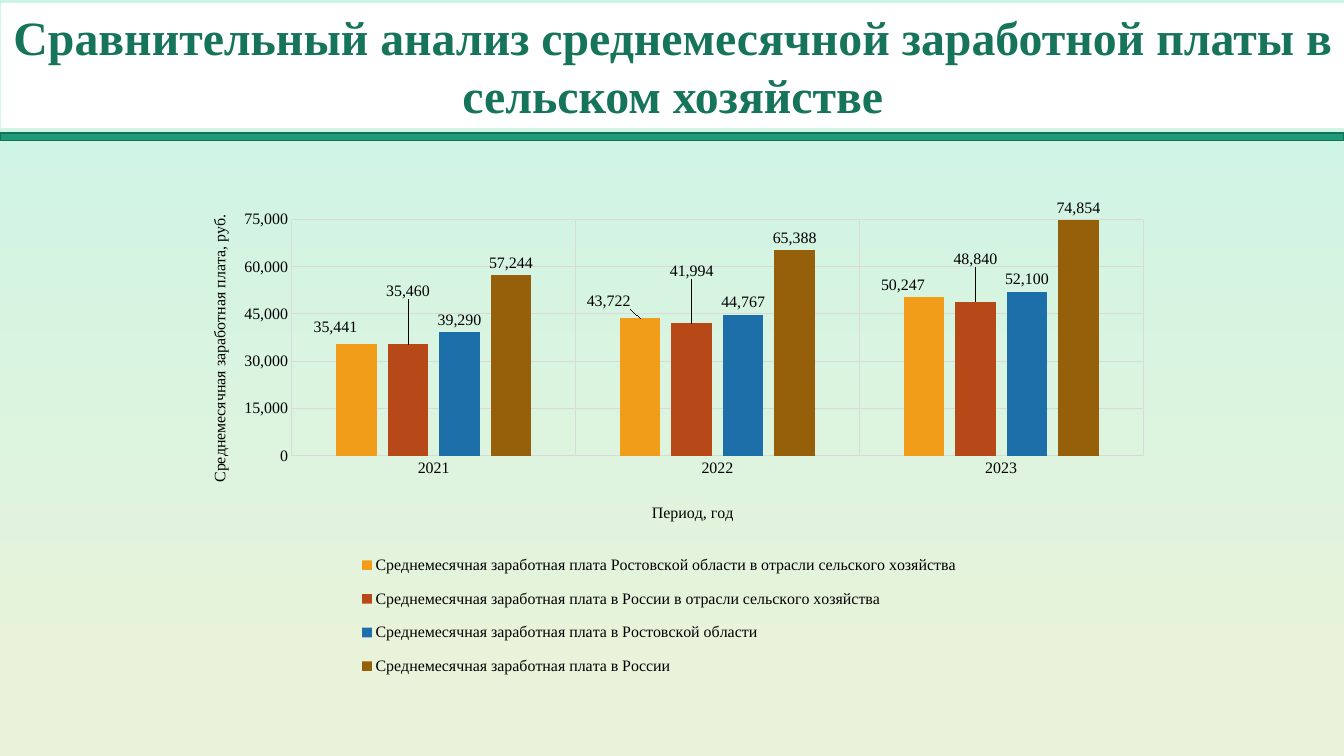
from lxml.etree import SubElement
from pptx import Presentation
from pptx.chart.data import CategoryChartData
from pptx.dml.color import RGBColor
from pptx.enum.chart import XL_CHART_TYPE, XL_LABEL_POSITION, XL_LEGEND_POSITION, XL_TICK_MARK
from pptx.enum.shapes import MSO_SHAPE
from pptx.enum.text import MSO_ANCHOR, MSO_AUTO_SIZE, PP_ALIGN
from pptx.oxml.ns import qn
from pptx.util import Inches, Pt

FONT = "Times New Roman"
WIDTH, HEIGHT = 14.06, 7.91
TITLE = "Сравнительный анализ среднемесячной заработной платы в сельском хозяйстве"
YEARS = ["2021", "2022", "2023"]
WAGES = [
    ("Среднемесячная заработная плата Ростовской области в отрасли сельского хозяйства",
     "F19D19", (35441, 43722, 50247), [(-0.02, -0.01), (-0.03, -0.01), (-0.02, 0)]),
    ("Среднемесячная заработная плата в России в отрасли сельского хозяйства",
     "B74919", (35460, 41994, 48840), [(0, -0.08), (0, -0.08), (0, -0.06)]),
    ("Среднемесячная заработная плата в Ростовской области",
     "1D6FA9", (39290, 44767, 52100), []),
    ("Среднемесячная заработная плата в России",
     "965F09", (57244, 65388, 74854), []),
]


def color(value):
    """Return the colour for a hex string."""
    return RGBColor.from_string(value)


def style(font, size, value, bold=False):
    """Give a font the deck's typeface, a size and a colour."""
    font.name, font.size, font.bold = FONT, Pt(size), bold
    font.color.rgb = color(value)


def place(element, **settings):
    """Write a manual layout into a chart part, in schema order."""
    for old in element.findall(qn("c:layout")):
        element.remove(old)
    heads = [qn("c:tx"), qn("c:legendPos"), qn("c:idx")]
    index = max((i + 1 for i, child in enumerate(element) if child.tag in heads), default=0)
    layout = SubElement(element, qn("c:layout"))
    element.insert(index, layout)
    manual = SubElement(layout, qn("c:manualLayout"))
    for name, value in settings.items():
        SubElement(manual, qn(f"c:{name}")).set("val", str(value))


def paint_background(page):
    """Fill the page with a vertical gradient."""
    fill = page.background.fill
    fill.gradient()
    fill.gradient_angle = 270
    for stop, position, value in zip(fill.gradient_stops, (0, 0.88), ("C8F5E8", "E8F3DA")):
        stop.position, stop.color.rgb = position, color(value)


def add_header(page, left, top, width, height):
    """Place the white title band and the green bar under it."""
    title = page.shapes.title
    title.left, title.top = Inches(left + 0.01), Inches(top + 0.03)
    title.width, title.height = Inches(width), Inches(height - 0.16)
    title.fill.solid()
    title.fill.fore_color.rgb = color("FFFFFF")
    frame = title.text_frame
    frame.text = TITLE
    frame.word_wrap, frame.auto_size = True, MSO_AUTO_SIZE.NONE
    frame.vertical_anchor = MSO_ANCHOR.MIDDLE
    para = frame.paragraphs[0]
    para.alignment, para.line_spacing = PP_ALIGN.CENTER, 1.0
    style(para.runs[0].font, 36, "16745A", True)

    bar = page.shapes.add_shape(MSO_SHAPE.RECTANGLE, Inches(left), Inches(top + height - 0.08),
                                Inches(width), Inches(0.08))
    bar.shadow.inherit = False
    bar.fill.solid()
    bar.fill.fore_color.rgb = color("1D9A78")
    bar.line.color.rgb = color("157259")
    bar.line.width = Pt(1)


def format_axis(axis, text, rotation, x, y):
    """Format an axis with its grid and its placed title."""
    axis.major_tick_mark = axis.minor_tick_mark = XL_TICK_MARK.NONE
    axis.has_major_gridlines = True
    for line in (axis.format.line, axis.major_gridlines.format.line):
        line.color.rgb = color("D9D9D9")
        line.width = Pt(0.75)
    style(axis.tick_labels.font, 12, "000000")
    title = axis.axis_title
    frame = title.text_frame
    frame.text = text
    style(frame.paragraphs[0].runs[0].font, 12, "000000")
    body = title._element.find(".//" + qn("a:bodyPr"))
    body.set("rot", str(rotation * 60000))
    body.set("vert", "horz")
    place(title._element, xMode="edge", yMode="edge", x=x, y=y)


def format_series(series, value, shifts):
    """Colour a series and set its value labels, shifting some of them."""
    series.format.fill.solid()
    series.format.fill.fore_color.rgb = color(value)
    series.invert_if_negative = False
    labels = series.data_labels
    labels.show_value = True
    labels.position = XL_LABEL_POSITION.OUTSIDE_END
    style(labels.font, 12, "000000")
    for index, (x, y) in enumerate(shifts):
        label = series.points[index].data_label
        label.position = XL_LABEL_POSITION.OUTSIDE_END
        style(label.font, 12, "000000")
        place(labels._element.findall(qn("c:dLbl"))[index], x=x, y=y)


def add_wage_chart(page, left, top, width, height):
    """Place the clustered columns of monthly wages."""
    data = CategoryChartData(number_format="#,##0")
    data.categories = YEARS
    for name, _, values, _ in WAGES:
        data.add_series(name, values)
    chart = page.shapes.add_chart(XL_CHART_TYPE.COLUMN_CLUSTERED, Inches(left), Inches(top),
                                  Inches(width), Inches(height), data).chart
    chart.has_title = False
    style(chart.font, 12, "000000")

    plot = chart.plots[0]
    plot.gap_width, plot.overlap, plot.vary_by_categories = 219, -27, False
    for series, (_, value, _, shifts) in zip(plot.series, WAGES):
        format_series(series, value, shifts)
    place(chart._chartSpace.find(".//" + qn("c:plotArea")), layoutTarget="inner",
          xMode="edge", yMode="edge", x=0.161, y=0.045, w=0.808, h=0.468)

    format_axis(chart.category_axis, "Период, год", 0, 0.5, 0.6)
    wages = chart.value_axis
    format_axis(wages, "Среднемесячная заработная плата, руб.", -90, 0.08, 0.03)
    wages.format.line.fill.background()
    wages.minimum_scale, wages.maximum_scale, wages.major_unit = 0, 75000, 15000
    wages.tick_labels.number_format = "#,##0"
    wages.tick_labels.number_format_is_linked = False

    chart.has_legend = True
    legend = chart.legend
    legend.position = XL_LEGEND_POSITION.BOTTOM
    legend.include_in_layout = False
    style(legend.font, 12, "000000")
    place(legend._element, xMode="edge", yMode="edge", x=0.22, y=0.68, w=0.58, h=0.3)


def main():
    """Build the deck and save it."""
    deck = Presentation()
    deck.slide_width, deck.slide_height = Inches(WIDTH), Inches(HEIGHT)
    page = deck.slides.add_slide(deck.slide_layouts[5])
    paint_background(page)
    add_header(page, 0, 0, WIDTH, 1.47)
    add_wage_chart(page, 1.28, 2.06, 11.02, 5.28)
    deck.save("out.pptx")


if __name__ == "__main__":
    main()
